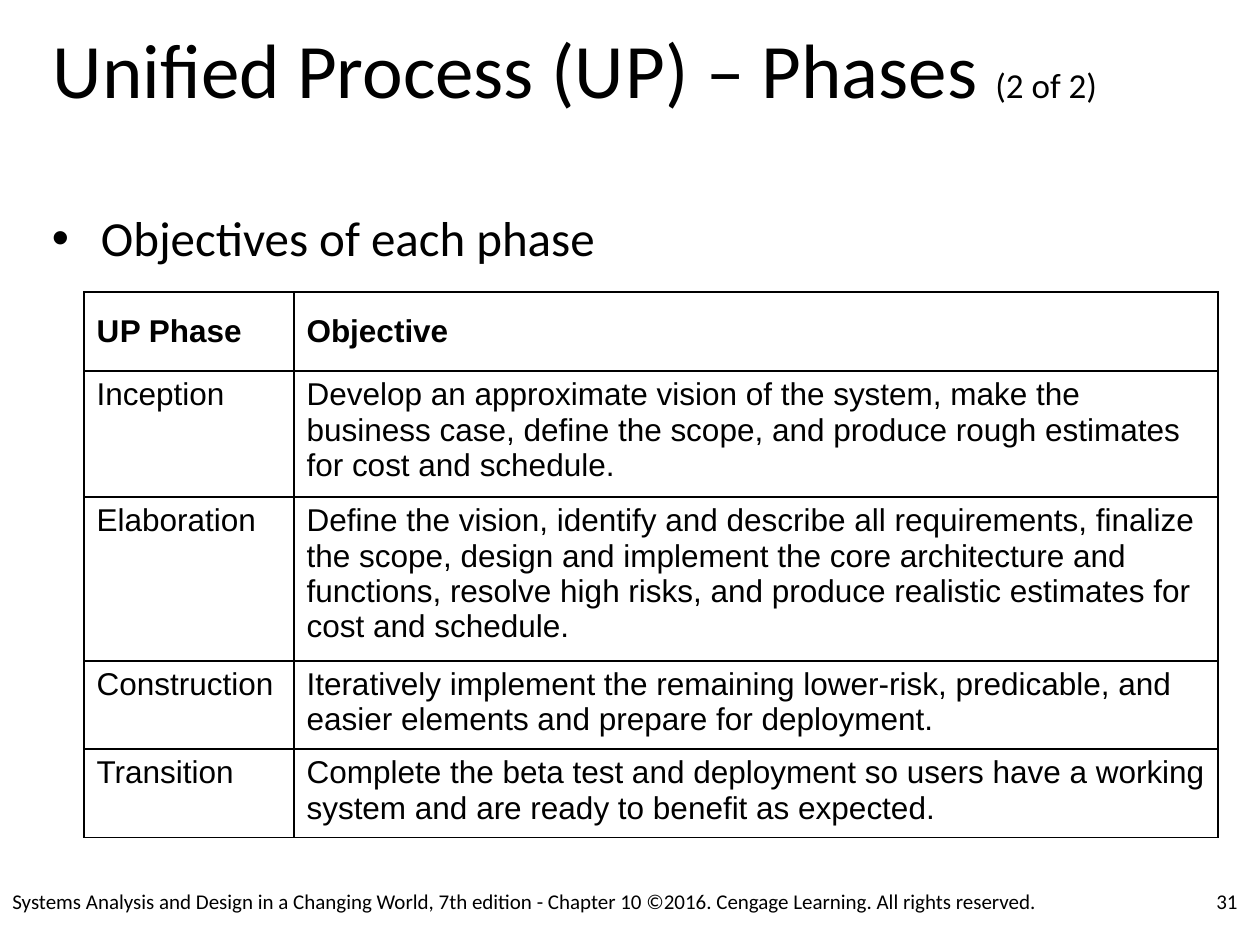
from lxml.etree import SubElement
from pptx import Presentation
from pptx.dml.color import RGBColor
from pptx.enum.text import MSO_ANCHOR as Anchor, PP_ALIGN as Align
from pptx.oxml import parse_xml
from pptx.oxml.ns import nsdecls, qn
from pptx.util import Pt

EMU_PER_PX = 914400 / 126
BLACK = RGBColor(0, 0, 0)
WHITE = RGBColor(255, 255, 255)
HEADING_FONT, TABLE_FONT = "Calibri", "Arial"

TITLE = [("Unified Process (U", 44), (" ", 1), ("P) – Phases ", 44), ("(2 of 2)", 20)]
HEADER = [[("U", 18), (" ", 1), ("P Phase", 18)], [("Objective", 18)]]
PHASES = [
    ("Inception", "Develop an approximate vision of the system, make the business case, "
     "define the scope, and produce rough estimates for cost and schedule."),
    ("Elaboration", "Define the vision, identify and describe all requirements, finalize "
     "the scope, design and implement the core architecture and functions, resolve high "
     "risks, and produce realistic estimates for cost and schedule."),
    ("Construction", "Iteratively implement the remaining lower-risk, predicable, and "
     "easier elements and prepare for deployment."),
    ("Transition", "Complete the beta test and deployment so users have a working system "
     "and are ready to benefit as expected."),
]
FOOTER = ("Systems Analysis and Design in a Changing World, 7th edition - Chapter 10 "
          "©2016. Cengage Learning. All rights reserved.")


def px(length):
    return round(length * EMU_PER_PX)


def add_runs(paragraph, pieces, font_name, bold=False):
    for text, size in pieces:
        run = paragraph.add_run()
        run.text = text
        run.font.name = font_name
        run.font.size = Pt(size)
        run.font.bold = bold
        run.font.color.rgb = BLACK


def add_text(slide, box, pieces, inset=True, anchor=Anchor.TOP, align=Align.LEFT):
    frame = slide.shapes.add_textbox(*map(px, box)).text_frame
    frame.word_wrap = True
    frame.vertical_anchor = anchor
    if not inset:
        frame.margin_left = frame.margin_right = 0
        frame.margin_top = frame.margin_bottom = 0
    paragraph = frame.paragraphs[0]
    paragraph.alignment = align
    add_runs(paragraph, pieces, HEADING_FONT)
    return paragraph


def add_title(slide, box):
    add_text(slide, box, TITLE, inset=False).line_spacing = 0.9


def add_objectives_bullet(slide, box):
    bullet = add_text(slide, box, [("Objectives of each phase", 28)], inset=False)
    properties = bullet._p.get_or_add_pPr()
    properties.set("marL", str(px(49)))
    properties.set("indent", str(-px(49)))
    SubElement(properties, qn("a:buFont"), typeface="Arial")
    SubElement(properties, qn("a:buChar"), char="•")
    bullet.line_spacing = 0.9


def outline_cell(cell):
    properties = cell._tc.get_or_add_tcPr()
    for index, side in enumerate(("lnL", "lnR", "lnT", "lnB")):
        properties.insert(index, parse_xml(
            f'<a:{side} {nsdecls("a")} w="{Pt(1)}"><a:solidFill>'
            f'<a:srgbClr val="{BLACK}"/></a:solidFill></a:{side}>'))


def add_phase_table(slide, box, phase_width):
    left, top, width, height = box
    rows = HEADER, *([[(text, 18)] for text in phase] for phase in PHASES)
    table = slide.shapes.add_table(len(rows), 2, *map(px, box)).table
    table.first_row = table.horz_banding = False
    table.columns[0].width = px(phase_width)
    table.columns[1].width = px(width - phase_width)
    for row_index, row in enumerate(rows):
        is_header = row_index == 0
        for column_index, pieces in enumerate(row):
            cell = table.cell(row_index, column_index)
            cell.fill.solid()
            cell.fill.fore_color.rgb = WHITE
            cell.vertical_anchor = Anchor.MIDDLE if is_header else Anchor.TOP
            outline_cell(cell)
            add_runs(cell.text_frame.paragraphs[0], pieces, TABLE_FONT, is_header)


def add_footer(slide, box):
    left, top, width, height = box
    number_width = 95
    add_text(slide, (left + width - number_width, top, number_width, height),
             [("31", 12)], anchor=Anchor.MIDDLE, align=Align.RIGHT)
    add_text(slide, (left, top, 1061, height), [(FOOTER, 12)], anchor=Anchor.MIDDLE)


def main():
    deck = Presentation()
    deck.slide_width, deck.slide_height = px(1260), px(945)
    slide = deck.slides.add_slide(deck.slide_layouts[6])
    add_title(slide, (53, 32, 1155, 84))
    add_objectives_bullet(slide, (52, 214, 567, 53))
    # Rows start equally tall and grow with their text
    add_phase_table(slide, (84, 292, 1134, 395), phase_width=210)
    add_footer(slide, (0, 876, 1250, 50))
    deck.save("out.pptx")


if __name__ == "__main__":
    main()
